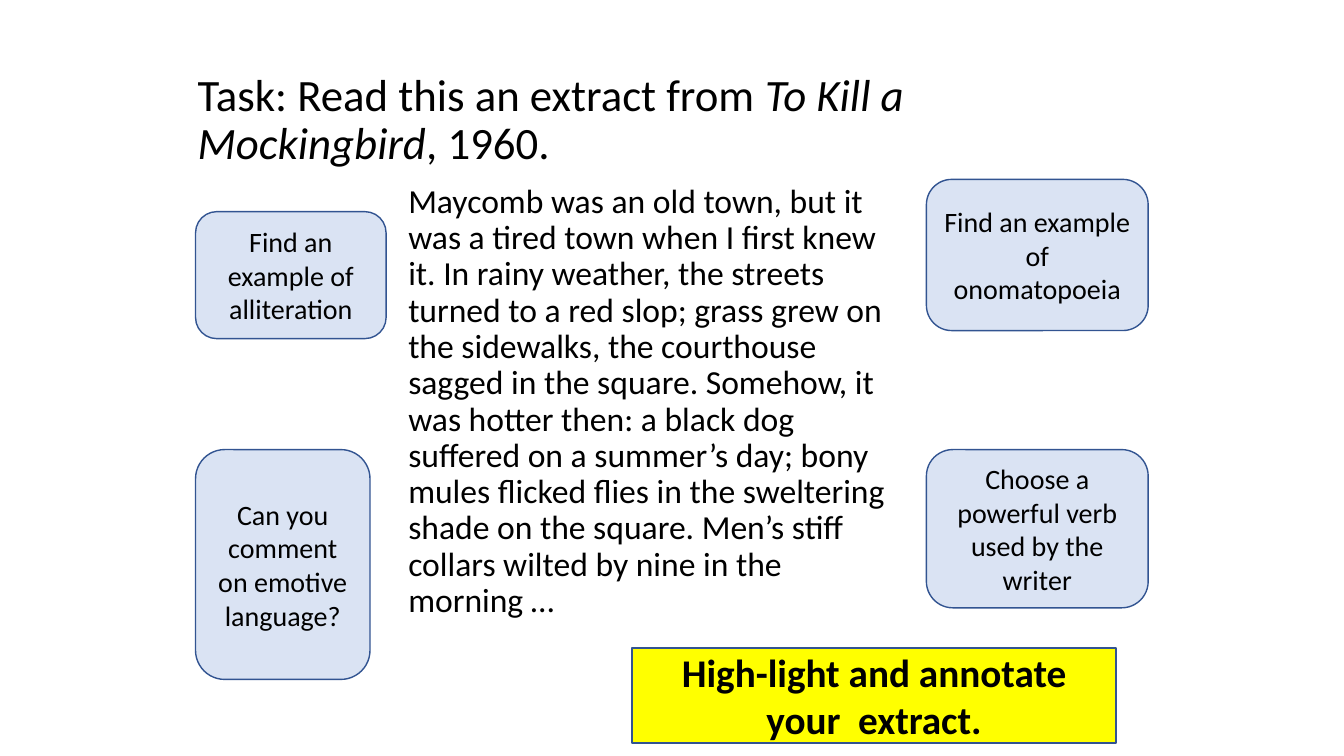
import dataclasses
import typing

import pptx
import pptx.dml.color
import pptx.enum.shapes
import pptx.enum.text
import pptx.util

WIDE = pptx.util.Inches(13.33)
HIGH = pptx.util.Inches(7.5)
LEFT, RIGHT, LOW = 14.55, 68.93, 59.47
BLUE, YELLOW, EDGE, INK = "DAE3F3", "FFFF00", "325491", "000000"
SHAPE = pptx.enum.shapes.MSO_SHAPE
ALIGN = pptx.enum.text.PP_ALIGN
ANCHOR = pptx.enum.text.MSO_ANCHOR


class Area(typing.NamedTuple):
    """Left, top, width and height as percentages of the slide."""
    left: float
    top: float
    width: float
    height: float

    def place(self) -> list[int]:
        return [round(part * side / 100)
                for part, side in zip(self, (WIDE, HIGH, WIDE, HIGH))]


class Run(typing.NamedTuple):
    text: str
    bold: bool = False
    italic: bool = False


@dataclasses.dataclass
class Box:
    area: Area
    run: Run
    form: SHAPE = SHAPE.ROUNDED_RECTANGLE
    fill: str = BLUE
    size: int = 20


TITLE = [Run("Task: Read this an extract from "),
         Run("To Kill a Mockingbird", italic=True),
         Run(", 1960.")]
STORY = Run(
    "Maycomb was an old town, but it was a tired town when I first knew it. "
    "In rainy weather, the streets turned to a red slop; grass grew on the "
    "sidewalks, the courthouse sagged in the square. Somehow, it was hotter "
    "then: a black dog suffered on a summer’s day; bony mules flicked flies "
    "in the sweltering shade on the square. Men’s stiff collars wilted by "
    "nine in the morning …")
BOXES = [
    Box(Area(LEFT, 28, 14.18, 16.8), Run("Find an example of alliteration")),
    Box(Area(RIGHT, 23.73, 16.5, 20), Run("Find an example of onomatopoeia")),
    Box(Area(RIGHT, LOW, 16.5, 20.93),
        Run("Choose a powerful verb used by the writer")),
    Box(Area(LEFT, LOW, 12.98, 30.4),
        Run("Can you comment on emotive language?")),
    Box(Area(47.03, 85.73, 36, 12.53),
        Run("High-light and annotate your  extract.", bold=True),
        SHAPE.RECTANGLE, YELLOW, 28),
]


def tint(code: str) -> pptx.dml.color.RGBColor:
    return pptx.dml.color.RGBColor.from_string(code)


def write(shape: typing.Any, runs: list[Run], size: int, align: ALIGN,
          anchor: ANCHOR, space: float = 1) -> None:
    frame = shape.text_frame
    frame.word_wrap = True
    frame.auto_size = pptx.enum.text.MSO_AUTO_SIZE.NONE
    frame.vertical_anchor = anchor
    para = frame.paragraphs[0]
    para.alignment = align
    para.line_spacing = space
    for item in runs:
        run = para.add_run()
        run.text = item.text
        font = run.font
        font.name = "Calibri"
        font.size = pptx.util.Pt(size)
        font.bold = item.bold
        font.italic = item.italic
        font.color.rgb = tint(INK)


def head(slide: typing.Any) -> None:
    title = slide.shapes.title
    title.left, title.top, title.width, title.height = Area(
        13.95, 4, 66.75, 24).place()
    write(title, TITLE, 32, ALIGN.LEFT, ANCHOR.MIDDLE, 0.9)


def story(slide: typing.Any) -> None:
    body = slide.shapes.add_textbox(*Area(28.73, 23.73, 38.4, 66.4).place())
    write(body, [STORY], 24, ALIGN.LEFT, ANCHOR.TOP, 0.9)
    body.text_frame.margin_left = pptx.util.Inches(0.22)
    body.text_frame.paragraphs[0].space_before = pptx.util.Pt(10)


def draw(slide: typing.Any, box: Box) -> None:
    shape = slide.shapes.add_shape(box.form, *box.area.place())
    shape.shadow.inherit = False
    shape.fill.solid()
    shape.fill.fore_color.rgb = tint(box.fill)
    shape.line.color.rgb = tint(EDGE)
    shape.line.width = pptx.util.Pt(1)
    write(shape, [box.run], box.size, ALIGN.CENTER, ANCHOR.MIDDLE)


def main() -> None:
    deck = pptx.Presentation()
    deck.slide_width, deck.slide_height = WIDE, HIGH
    slide = deck.slides.add_slide(deck.slide_layouts.get_by_name("Title Only"))
    head(slide)
    story(slide)
    for box in BOXES:
        draw(slide, box)
    deck.save("out.pptx")


if __name__ == "__main__":
    main()
